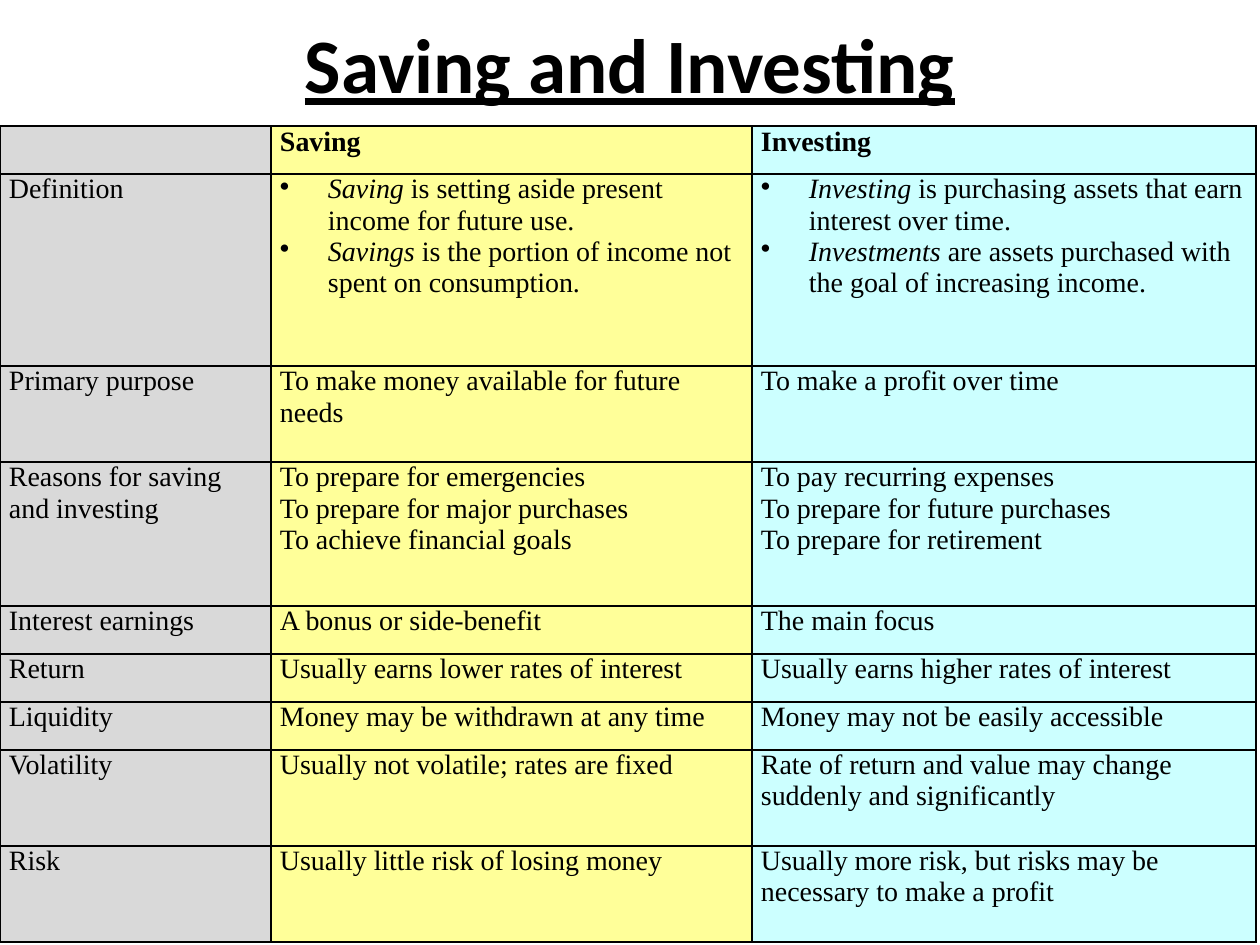
from lxml.etree import SubElement
from pptx import Presentation
from pptx.dml.color import RGBColor
from pptx.enum.text import MSO_ANCHOR, PP_ALIGN
from pptx.oxml.ns import qn
from pptx.util import Pt

PX = 914400 / 126
COLORS = {"ink": "000000", "topic": "D9D9D9", "saving": "FFFF99", "investing": "CCFFFF"}
COLUMNS = [("topic", 271), ("saving", 481), ("investing", 504)]
ROW_UNIT = 48

# Row height in units, then one text per column; *stars* mark italics
ROWS = [
    (1, "", "Saving", "Investing"),
    (4, "Definition",
     "*Saving* is setting aside present income for future use.\n"
     "*Savings* is the portion of income not spent on consumption.",
     "*Investing* is purchasing assets that earn interest over time.\n"
     "*Investments* are assets purchased with the goal of increasing income."),
    (2, "Primary purpose", "To make money available for future needs",
     "To make a profit over time"),
    (3, "Reasons for saving and investing",
     "To prepare for emergencies\nTo prepare for major purchases\n"
     "To achieve financial goals",
     "To pay recurring expenses\nTo prepare for future purchases\n"
     "To prepare for retirement"),
    (1, "Interest earnings", "A bonus or side-benefit", "The main focus"),
    (1, "Return", "Usually earns lower rates of interest",
     "Usually earns higher rates of interest"),
    (1, "Liquidity", "Money may be withdrawn at any time",
     "Money may not be easily accessible"),
    (2, "Volatility", "Usually not volatile; rates are fixed",
     "Rate of return and value may change suddenly and significantly"),
    (2, "Risk", "Usually little risk of losing money",
     "Usually more risk, but risks may be necessary to make a profit"),
]


def px(length):
    return round(length * PX)


def rgb(name):
    return RGBColor.from_string(COLORS[name])


def add_bullet(paragraph):
    properties = paragraph._p.get_or_add_pPr()
    properties.set("marL", str(px(48)))
    properties.set("indent", str(px(-48)))
    SubElement(properties, qn("a:buChar"), char="•")


def write_text(frame, text, font="Times New Roman", size=16, bold=False,
               underline=False, align=PP_ALIGN.LEFT, after=0):
    """Fill a frame: one paragraph a line, bulleted where it opens with a starred term."""
    for number, line in enumerate(text.split("\n")):
        paragraph = frame.add_paragraph() if number else frame.paragraphs[0]
        if line.startswith("*"):
            add_bullet(paragraph)
        paragraph.alignment = align
        paragraph.space_before = Pt(0)
        paragraph.space_after = Pt(after)
        paragraph.font.size = Pt(size)
        for part, words in enumerate(line.split("*")):
            if not words:
                continue
            run = paragraph.add_run()
            run.text = words
            run.font.name = font
            run.font.size = Pt(size)
            run.font.bold = bold
            run.font.italic = part % 2 == 1
            run.font.underline = underline
            run.font.color.rgb = rgb("ink")


def add_borders(cell):
    properties = cell._tc.get_or_add_tcPr()
    for side in ("lnL", "lnR", "lnT", "lnB"):
        line = SubElement(properties, qn(f"a:{side}"), w=str(Pt(1)))
        fill = SubElement(line, qn("a:solidFill"))
        SubElement(fill, qn("a:srgbClr"), val=COLORS["ink"])


def format_cell(cell, color):
    cell.margin_left = cell.margin_right = px(9)
    cell.margin_top = cell.margin_bottom = 0
    cell.vertical_anchor = MSO_ANCHOR.TOP
    add_borders(cell)
    cell.fill.solid()
    cell.fill.fore_color.rgb = rgb(color)


def set_title(slide, text):
    title = slide.shapes.title
    title.left, title.top, title.width, title.height = px(63), 0, px(1134), px(126)
    title.text_frame.vertical_anchor = MSO_ANCHOR.MIDDLE
    write_text(title.text_frame, text, font="Calibri", size=44, bold=True,
               underline=True, align=PP_ALIGN.CENTER)


def add_comparison(slide):
    width = sum(column_width for _, column_width in COLUMNS)
    height = ROW_UNIT * sum(row[0] for row in ROWS)
    table = slide.shapes.add_table(len(ROWS), len(COLUMNS), 0, px(126),
                                   px(width), px(height)).table
    for column, (_, column_width) in zip(table.columns, COLUMNS):
        column.width = px(column_width)
    for r, (units, *texts) in enumerate(ROWS):
        table.rows[r].height = px(units * ROW_UNIT)
        header = r == 0
        for c, text in enumerate(texts):
            cell = table.cell(r, c)
            format_cell(cell, COLUMNS[c][0])
            write_text(cell.text_frame, text, bold=header, after=6 if header else 0)


def main():
    deck = Presentation()
    deck.slide_width, deck.slide_height = px(1260), px(945)
    slide = deck.slides.add_slide(deck.slide_layouts[5])
    set_title(slide, "Saving and Investing")
    add_comparison(slide)
    deck.save("out.pptx")


if __name__ == "__main__":
    main()
